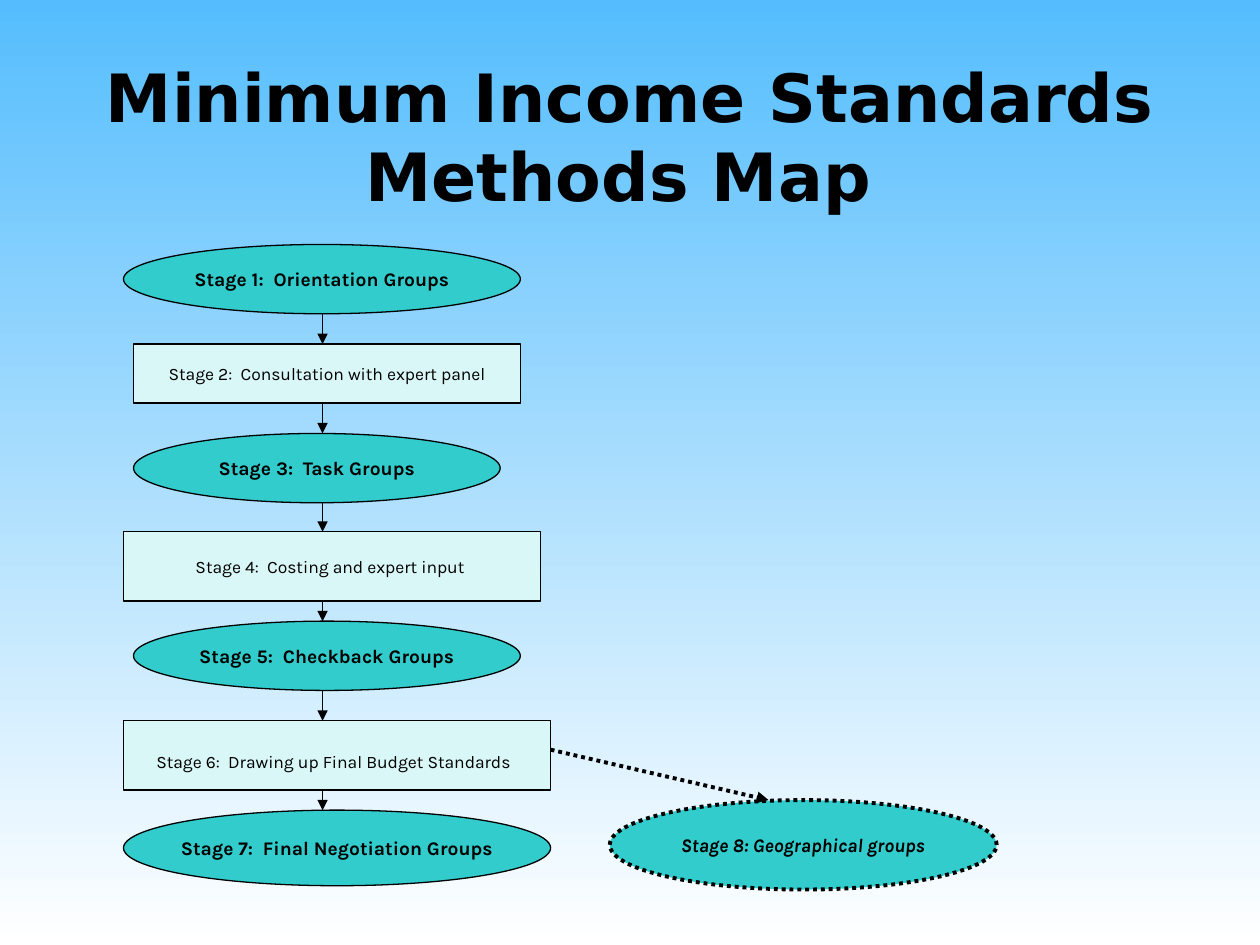
from dataclasses import dataclass

from lxml import etree
from pptx import Presentation
from pptx.dml.color import RGBColor
from pptx.enum import dml, shapes, text
from pptx.oxml.ns import qn
from pptx.util import Inches, Pt


@dataclass(frozen=True)
class Theme:
    sky: str = "55BDFD"
    white: str = "FFFFFF"
    ink: str = "000000"
    group: str = "33CCCC"
    expert: str = "D9F7F6"
    title_font: str = "DejaVu Sans"
    body_font: str = "Karla"
    title_size: float = 38
    group_size: float = 11
    expert_size: float = 10
    spacer_size: float = 18
    thin: float = 0.75
    thick: float = 2.25


T = Theme()


def add_text(p, content, size, font=T.body_font, bold=False, italic=False):
    r = p.add_run()
    r.text = content
    f = r.font
    f.name, f.size, f.bold, f.italic = font, Pt(size), bold, italic
    f.color.rgb = RGBColor.from_string(T.ink)
    p.alignment = text.PP_ALIGN.CENTER


def set_line(line, dotted):
    line.color.rgb = RGBColor.from_string(T.ink)
    line.width = Pt(T.thick if dotted else T.thin)
    if dotted:
        line.dash_style = dml.MSO_LINE.ROUND_DOT


prs = Presentation()
prs.slide_width, prs.slide_height = Inches(10), Inches(7.5)
s = prs.slides.add_slide(prs.slide_layouts[5])

# Background: sky fading down to white
fill = s.background.fill
fill.gradient()
fill.gradient_angle = 270
for stop, color, position in zip(fill.gradient_stops, (T.sky, T.white), (0, 1)):
    stop.color.rgb = RGBColor.from_string(color)
    stop.position = position

# Title
title = s.shapes.title
title.left, title.top = Inches(0.5), Inches(0.32)
title.width, title.height = Inches(9), Inches(1.51)
tf = title.text_frame
tf.word_wrap = True
tf.auto_size = text.MSO_AUTO_SIZE.NONE
tf.vertical_anchor = text.MSO_ANCHOR.MIDDLE
add_text(tf.paragraphs[0], "Minimum Income Standards Methods Map ",
         T.title_size, font=T.title_font, bold=True)

# Stages: label, left, top, width, height; odd ones and the last are groups
stages = [
    ("Stage 1:  Orientation Groups", 0.98, 1.94, 3.15, 0.55),
    ("Stage 2:  Consultation with expert panel", 1.06, 2.73, 3.07, 0.47),
    ("Stage 3:  Task Groups", 1.06, 3.44, 2.91, 0.55),
    ("Stage 4:  Costing and expert input ", 0.98, 4.22, 3.31, 0.55),
    ("Stage 5:  Checkback Groups", 1.06, 4.93, 3.07, 0.55),
    ("Stage 6:  Drawing up Final Budget Standards", 0.98, 5.72, 3.39, 0.55),
    ("Stage 7:  Final Negotiation Groups", 0.98, 6.43, 3.39, 0.6),
    ("Stage 8: Geographical groups", 4.84, 6.35, 3.07, 0.71),
]
for number, (label, *box) in enumerate(stages, 1):
    optional = number == 8
    is_group = number % 2 == 1 or optional
    kind = shapes.MSO_SHAPE.OVAL if is_group else shapes.MSO_SHAPE.RECTANGLE
    sp = s.shapes.add_shape(kind, *map(Inches, box))
    sp.shadow.inherit = False
    sp.fill.solid()
    sp.fill.fore_color.rgb = RGBColor.from_string(T.group if is_group else T.expert)
    set_line(sp.line, optional)
    tf = sp.text_frame
    tf.word_wrap = False
    tf.vertical_anchor = text.MSO_ANCHOR.MIDDLE
    p = tf.paragraphs[0]
    add_text(p, label, T.group_size if is_group else T.expert_size,
             bold=is_group, italic=optional)
    if number == 6:
        add_text(p, " ", T.spacer_size)

# Arrows: down the main column, then out to the optional stage
column_x = 2.56
arrows = [
    (column_x, top + height, column_x, next_top, False)
    for (_, _, top, _, height), (_, _, next_top, _, _) in zip(stages[:6], stages[1:7])
]
arrows.append((4.37, 5.95, 6.1, 6.35, True))
for *ends, dotted in arrows:
    arrow = s.shapes.add_connector(shapes.MSO_CONNECTOR.STRAIGHT, *map(Inches, ends))
    set_line(arrow.line, dotted)
    sp_pr = arrow.line._get_or_add_ln().getparent()
    etree.SubElement(sp_pr.find(qn("a:ln")), qn("a:tailEnd"), type="triangle")
    etree.SubElement(sp_pr, qn("a:effectLst"))

prs.save("out.pptx")
